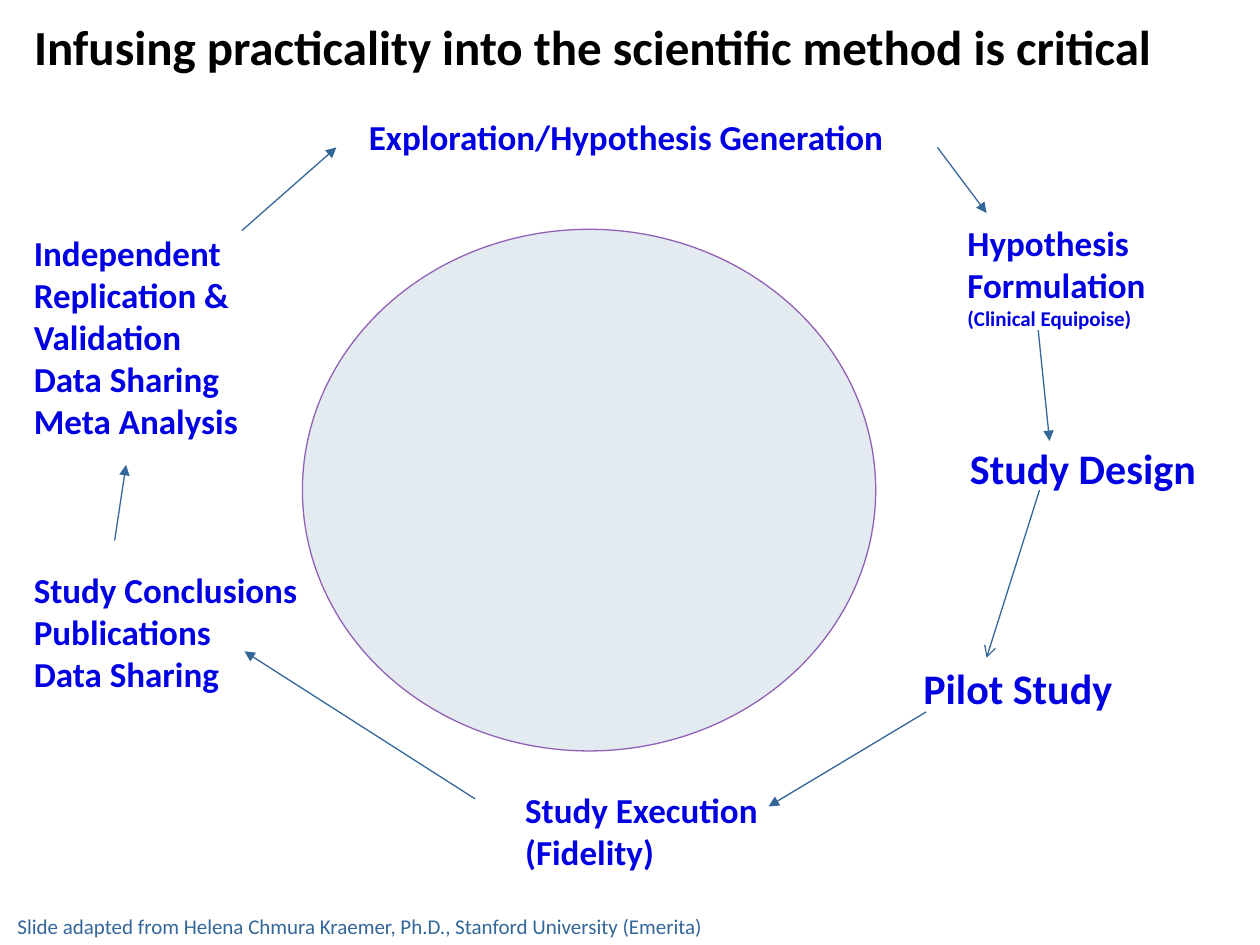
from lxml.etree import SubElement
from pptx import Presentation
from pptx.dml.color import RGBColor
from pptx.enum.shapes import MSO_CONNECTOR, MSO_SHAPE
from pptx.enum.text import MSO_ANCHOR, PP_ALIGN
from pptx.oxml.ns import qn
from pptx.util import Inches, Pt

WIDE, HIGH = Inches(10), Inches(7.5)
COLS, ROWS = 100, 75
FONT = "Calibri"
BLACK = RGBColor(0x00, 0x00, 0x00)
BLUE = RGBColor(0x00, 0x00, 0xE2)
STEEL = RGBColor(0x33, 0x66, 0x99)
PALE = RGBColor(0xE3, 0xEB, 0xF1)
PURPLE = RGBColor(0x70, 0x30, 0xA0)

STEPS = [
    ((28.3, 8.7, 44, 4.4), ["Exploration/Hypothesis Generation"], [20], True),
    ((40.7, 62.1, 20.7, 7.7), ["Study Execution", "(Fidelity)"], [20, 20], False),
    ((75.8, 17.1, 22.5, 9.8),
     ["Hypothesis", "Formulation", "(Clinical Equipoise)"], [20, 20, 12], True),
    ((76, 34.6, 22.3, 5), ["Study Design"], [24], True),
    ((72.3, 52.1, 17.9, 5), ["Pilot Study"], [24], False),
    ((1.7, 44.6, 25, 11.1),
     ["Study Conclusions", "Publications", "Data Sharing"], [20] * 3, True),
    ((1.7, 17.9, 22.9, 17.8),
     ["Independent", "Replication &", "Validation", "Data Sharing", "Meta Analysis"],
     [20] * 5, True),
]
ARROWS = [
    ((74.4, 11.7), (78.3, 16.9), "triangle"),
    ((82.4, 26.2), (83.3, 35), "triangle"),
    ((82.5, 38.9), (78.3, 52.2), "arrow"),
    ((73.5, 56.5), (61, 64), "triangle"),
    ((37.7, 63.4), (19.4, 51.7), "triangle"),
    ((9.1, 42.9), (10, 36.9), "triangle"),
    ((19.2, 18.3), (26.7, 11.7), "triangle"),
]


def spot(col, row):
    """Turn a column and a row into slide lengths."""
    return round(WIDE * col / COLS), round(HIGH * row / ROWS)


def area(box):
    """Turn a grid box into left, top, width and height."""
    return spot(*box[:2]) + spot(*box[2:])


def write(frame, lines, sizes, color, bold=True, wrap=True):
    """Fill a text frame with one paragraph per line."""
    frame.text = "\n".join(lines)
    frame.word_wrap = wrap
    frame.vertical_anchor = MSO_ANCHOR.TOP
    for para, size in zip(frame.paragraphs, sizes):
        para.alignment = PP_ALIGN.LEFT
        for run in para.runs:
            run.font.name = FONT
            run.font.size = Pt(size)
            run.font.bold = bold
            run.font.color.rgb = color


def add_title(slide, box, text):
    """Place and format the title."""
    title = slide.shapes.title
    title.left, title.top, title.width, title.height = area(box)
    write(title.text_frame, [text], [28], BLACK)


def add_text(slide, box, lines, sizes, color=BLUE, bold=True, wrap=True):
    """Add a text box on the grid."""
    label = slide.shapes.add_textbox(*area(box))
    write(label.text_frame, lines, sizes, color, bold, wrap)


def add_hub(slide, box):
    """Add the pale ellipse with its translucent outline."""
    hub = slide.shapes.add_shape(MSO_SHAPE.OVAL, *area(box))
    hub.shadow.inherit = False
    hub.fill.solid()
    hub.fill.fore_color.rgb = PALE
    hub.line.color.rgb = PURPLE
    hub.line.width = Pt(0.75)
    tint = hub.line._get_or_add_ln().find(".//" + qn("a:srgbClr"))
    SubElement(tint, qn("a:alpha"), val="75000")


def add_arrow(slide, start, end, tip):
    """Add an arrow between two grid points."""
    link = slide.shapes.add_connector(MSO_CONNECTOR.STRAIGHT, *spot(*start), *spot(*end))
    link.line.color.rgb = STEEL
    link.line.width = Pt(0.75)
    SubElement(link.line._get_or_add_ln(), qn("a:tailEnd"), type=tip)
    SubElement(link._element.spPr, qn("a:effectLst"))


def main():
    """Build and save the slide."""
    deck = Presentation()
    deck.slide_width, deck.slide_height = WIDE, HIGH
    slide = deck.slides.add_slide(deck.slide_layouts.get_by_name("Title Only"))
    add_title(slide, (1.7, 0.8, 96.6, 5.7),
              "Infusing practicality into the scientific method is critical")
    add_hub(slide, (24, 18.2, 45.5, 41.4))
    for box, lines, sizes, wrap in STEPS:
        add_text(slide, box, lines, sizes, wrap=wrap)
    for start, end, tip in ARROWS:
        add_arrow(slide, start, end, tip)
    add_text(slide, (0.4, 72, 75, 3),
             ["Slide adapted from Helena Chmura Kraemer, Ph.D., Stanford University (Emerita)"],
             [12], STEEL, bold=False)
    deck.save("out.pptx")


if __name__ == "__main__":
    main()
